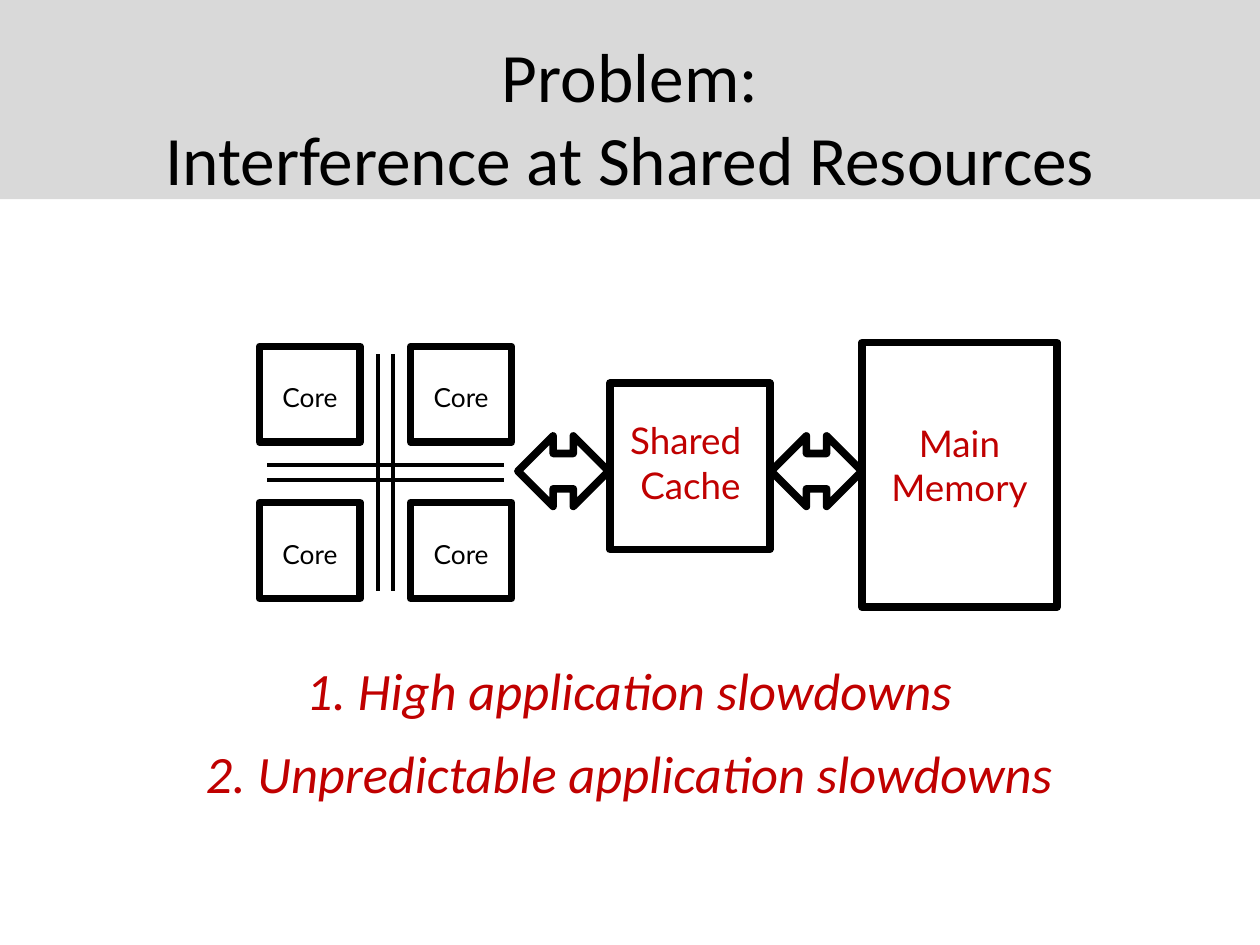
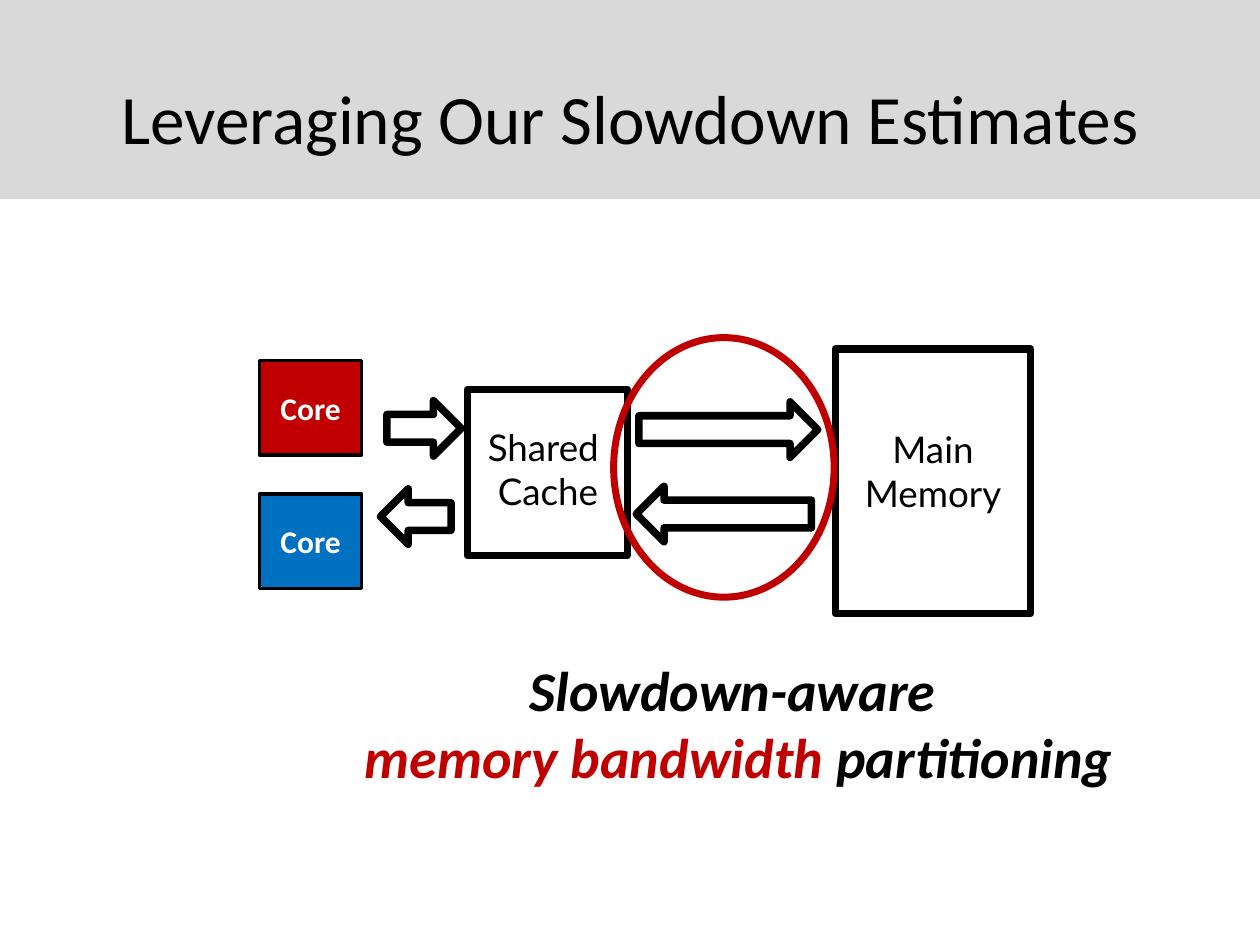
"""Build two slides on shared-resource interference and slowdown estimates."""
from pptx import Presentation
from pptx.dml.color import RGBColor
from pptx.enum.shapes import MSO_CONNECTOR, MSO_SHAPE
from pptx.enum.text import MSO_ANCHOR, MSO_AUTO_SIZE, PP_ALIGN
from pptx.util import Pt
from lxml.etree import SubElement

PX = 9144
BLACK, WHITE, GREY = "000000", "FFFFFF", "D9D9D9"
RED, BLUE = "C00000", "0070C0"
HEAD, LABEL = "Calibri", "Lato"
THICK, THIN = 4.32, 2
TITLES = ["Problem:\vInterference at Shared Resources",
          "Leveraging Our Slowdown Estimates"]
color = RGBColor.from_string


def draw(slide, kind, at, text="", fill=None, line=BLACK, width=THICK):
    """Add a preset shape, or a text box when kind is None."""
    at = [v * PX for v in at]
    if kind is None:
        shape = slide.shapes.add_textbox(*at)
    else:
        shape = slide.shapes.add_shape(kind, *at)
        shape.shadow.inherit = False
        if fill:
            shape.fill.solid()
            shape.fill.fore_color.rgb = color(fill)
        else:
            shape.fill.background()
        if line:
            shape.line.color.rgb = color(line)
            shape.line.width = Pt(width)
        else:
            shape.line.fill.background()
    shape.text_frame.text = text
    return shape


def style(shape, size, font=LABEL, hue=BLACK, bold=False, italic=False):
    """Centre the text of a shape and format all its runs."""
    shape.text_frame.word_wrap = True
    for para in shape.text_frame.paragraphs:
        para.alignment = PP_ALIGN.CENTER
        for run in para.runs:
            run.font.size = Pt(size)
            run.font.name = font
            run.font.bold = bold
            run.font.italic = italic
            run.font.color.rgb = color(hue)


deck = Presentation()
deck.slide_width, deck.slide_height = 1000 * PX, 750 * PX
layout = deck.slide_layouts[5]
first, second = [deck.slides.add_slide(layout) for _ in TITLES]

band = draw(first, MSO_SHAPE.RECTANGLE, (0, 0, 1000, 158), fill=GREY, line=None)
layout.shapes._spTree.insert(2, band._element)
for slide, words in zip((first, second), TITLES):
    title = slide.shapes.title
    title.left, title.top, title.width, title.height = [
        v * PX for v in (50, 30, 900, 125)]
    title.text_frame.text = words
    title.text_frame.auto_size = MSO_AUTO_SIZE.NONE
    title.text_frame.vertical_anchor = MSO_ANCHOR.MIDDLE
    style(title, 39.6, HEAD)

for slide, mem, cache, top, hue in [(first, 684, 484, 272, RED),
                                    (second, 663, 371, 277, BLACK)]:
    draw(slide, MSO_SHAPE.RECTANGLE, (mem, top, 155, 210))
    style(draw(slide, None, (mem + 2, top + 57, 151, 81), "Main Memory"), 21, hue=hue)
    draw(slide, MSO_SHAPE.RECTANGLE, (cache, top + 32, 127, 132))
    style(draw(slide, None, (cache + 2, top + 55, 124, 81), "Shared \nCache"), 21, hue=hue)

for left in (612, 411):
    draw(first, MSO_SHAPE.LEFT_RIGHT_ARROW, (left, 346, 72, 56))
for top in (275, 399):
    for left in (326, 206):
        draw(first, MSO_SHAPE.RECTANGLE, (left, top, 80, 76))
        style(draw(first, None, (left, top + 23, 80, 35), "Core"), 15)

for ends in [(300, 281, 300, 469), (312, 281, 312, 469),
             (212, 381, 400, 381), (212, 369, 400, 369)]:
    wire = first.shapes.add_connector(MSO_CONNECTOR.STRAIGHT, *[v * PX for v in ends])
    wire.line.color.rgb = color(BLACK)
    wire.line.width = Pt(THIN)
    SubElement(wire._element.spPr,
               "{http://schemas.openxmlformats.org/drawingml/2006/main}effectLst")

for top, words in [(517, "1. High application slowdowns"),
                   (583, "2. Unpredictable application slowdowns")]:
    note = draw(first, None, (148, top, 703, 61), words)
    note.text_frame.vertical_anchor = MSO_ANCHOR.MIDDLE
    style(note, 30, HEAD, RED, italic=True)

for kind, left, top, width in [(MSO_SHAPE.RIGHT_ARROW, 507, 319, 142),
                               (MSO_SHAPE.LEFT_ARROW, 505, 386, 139),
                               (MSO_SHAPE.RIGHT_ARROW, 307, 318, 59),
                               (MSO_SHAPE.LEFT_ARROW, 302, 388, 56)]:
    draw(second, kind, (left, top, width, 44))
for top, fill in [(286, RED), (392, BLUE)]:
    core = draw(second, MSO_SHAPE.RECTANGLE, (206, top, 81, 75), "Core", fill, width=THIN)
    style(core, 18, HEAD, WHITE, bold=True)
draw(second, MSO_SHAPE.OVAL, (487, 268, 175, 206), line=RED, width=4)

note = draw(second, None, (275, 515, 623, 118), "Slowdown-aware \nmemory bandwidth")
para = note.text_frame.paragraphs[1]
para.add_run().text = " partitioning"
style(note, 32, HEAD, bold=True, italic=True)
para.runs[0].font.color.rgb = color(RED)

deck.save("out.pptx")
